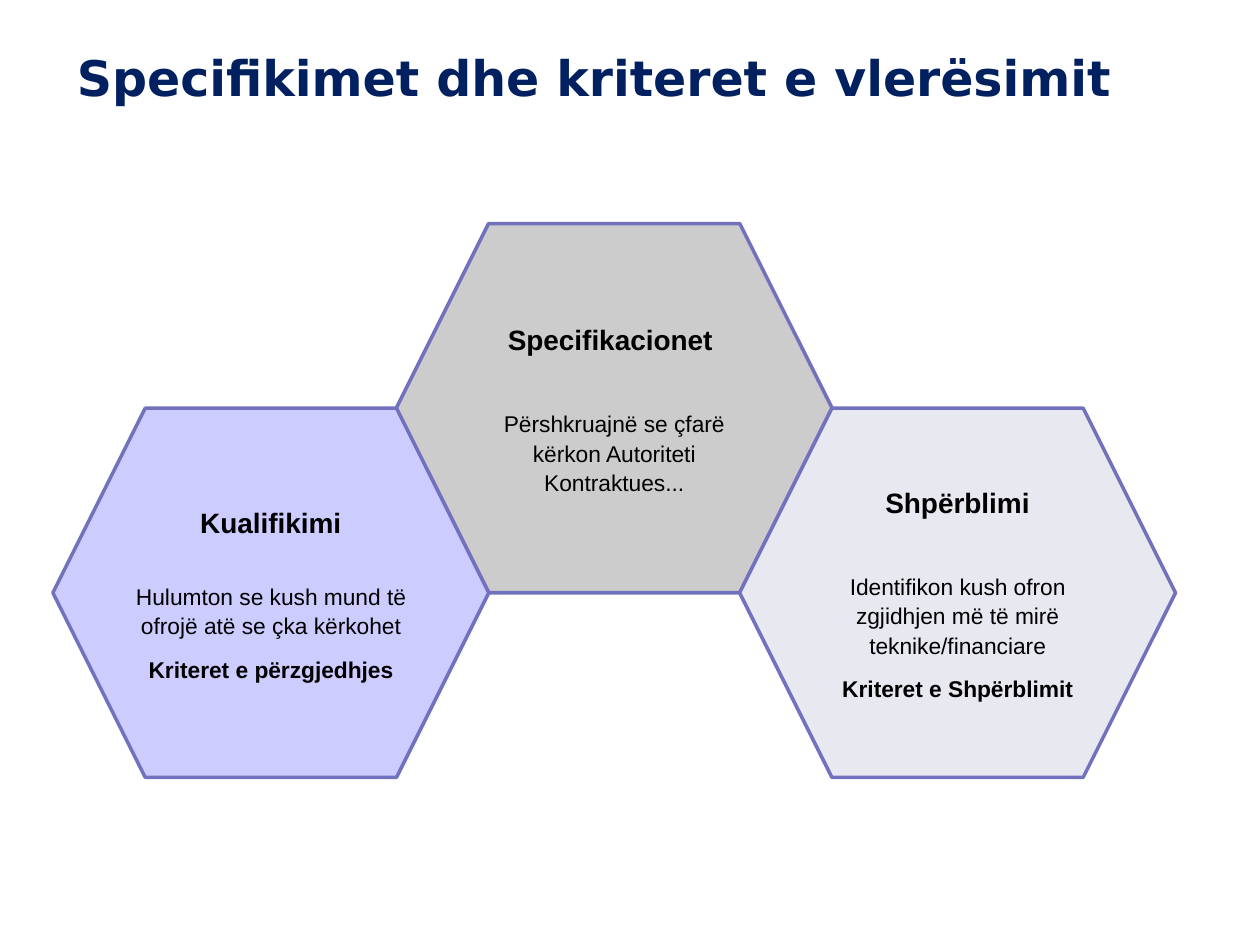
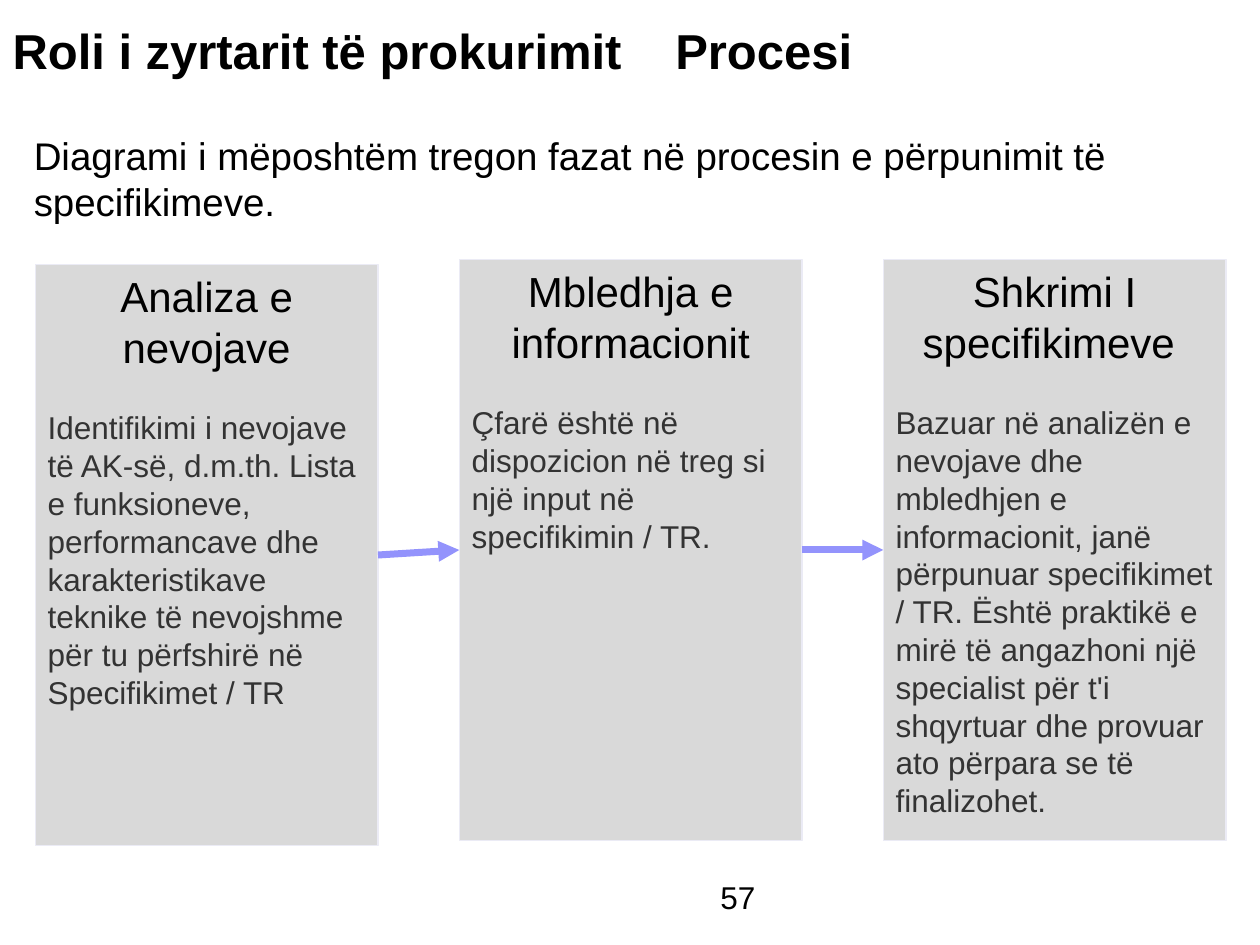
from pptx import Presentation
from pptx.dml.color import RGBColor
from pptx.enum.shapes import MSO_CONNECTOR as Link, MSO_SHAPE as Form
from pptx.enum.text import MSO_ANCHOR as Anchor, MSO_AUTO_SIZE as Fit, PP_ALIGN as Align
from pptx.oxml.ns import qn
from pptx.util import Inches, Pt
from lxml.etree import SubElement as Sub

# Grid: 100 columns by 75 rows on a 10 x 7.5 inch page
COLS, ROWS = 100, 75
WIDE, HIGH = Inches(10), Inches(7.5)

BLACK, NAVY, DARK = "000000", "002060", "333333"
EDGE, PANEL, RIM, ARROW = "7171BD", "D9D9D9", "EBEBF5", "9393FC"


def tint(code):
    return RGBColor.from_string(code)


class Deck:
    """Holds the style and the current slide."""

    def __init__(self):
        self.prs = Presentation()
        self.prs.slide_width, self.prs.slide_height = WIDE, HIGH
        self.slide = None

    def area(self, x, y, w, h):
        return [int(v) for v in (x * WIDE / COLS, y * HIGH / ROWS,
                                 w * WIDE / COLS, h * HIGH / ROWS)]

    def style(self, para, size, color=BLACK, bold=False, font="Arial",
              align=Align.LEFT, after=0, line=1.0):
        para.alignment, para.line_spacing = align, line
        para.space_before, para.space_after = Pt(0), Pt(after)
        for run in para.runs:
            run.font.name, run.font.size = font, Pt(size)
            run.font.bold, run.font.color.rgb = bold, tint(color)

    def fill(self, frame, rows):
        """Each row is a text and its style."""
        frame.text = "\n".join(text for text, _ in rows)
        for para, (_, look) in zip(frame.paragraphs, rows):
            self.style(para, **look)

    def page(self, text, place, tab=None, **look):
        """Starts a slide with its title."""
        self.slide = self.prs.slides.add_slide(self.prs.slide_layouts[5])
        title = self.slide.shapes.title
        title.left, title.top, title.width, title.height = self.area(*place)
        frame = title.text_frame
        frame.text = text
        frame.word_wrap, frame.auto_size = True, Fit.NONE
        frame.vertical_anchor = Anchor.TOP
        para = frame.paragraphs[0]
        self.style(para, 28, bold=True, **look)
        if tab:
            stops = Sub(para._p.get_or_add_pPr(), qn("a:tabLst"))
            Sub(stops, qn("a:tab"), pos=str(int(tab * WIDE / COLS)), algn="l")

    def note(self, text, place, size, wrap=True):
        frame = self.slide.shapes.add_textbox(*self.area(*place)).text_frame
        frame.word_wrap = wrap
        self.fill(frame, [(text, dict(size=size))])

    def block(self, form, place, fill, edge, width, rows, anchor, inset=None):
        shape = self.slide.shapes.add_shape(form, *self.area(*place))
        shape.shadow.inherit = False
        shape.fill.solid()
        shape.fill.fore_color.rgb = tint(fill)
        shape.line.color.rgb, shape.line.width = tint(edge), Pt(width)
        frame = shape.text_frame
        frame.word_wrap, frame.vertical_anchor = True, anchor
        if inset is not None:
            frame.margin_left = frame.margin_right = inset
            frame.margin_top = frame.margin_bottom = inset
        self.fill(frame, rows)
        return shape

    def arrow(self, start, end):
        """Runs from the right side of one block to the left of the next."""
        link = self.slide.shapes.add_connector(Link.STRAIGHT, 0, 0, 0, 0)
        link.begin_connect(start, 3)
        link.end_connect(end, 1)
        link.line.color.rgb, link.line.width = tint(ARROW), Pt(4)
        Sub(link.line._get_or_add_ln(), qn("a:tailEnd"), type="triangle")
        Sub(link._element.spPr, qn("a:effectLst"))


def criteria(deck):
    deck.page("Specifikimet dhe kriteret e vlerësimit", (5.1, 3.3, 84.2, 5.7),
              color=NAVY, font="DejaVu Sans")
    # Column, fill, inset, gap under the heading, heading, body, closing line
    cells = [
        (1, "CCCCCC", None, 29.5, "Specifikacionet ",
         "Përshkruajnë se çfarë kërkon Autoriteti Kontraktues...", None),
        (2, "E8E8F1", 0, 29.5, "Shpërblimi",
         "Identifikon kush ofron zgjidhjen më të mirë teknike/financiare",
         "Kriteret e Shpërblimit"),
        (0, "CCCCFF", 0, 24, "Kualifikimi",
         "Hulumton se kush mund të ofrojë atë se çka kërkohet",
         "Kriteret e përzgjedhjes"),
    ]
    wide, high = 34.6, 29.3
    base = dict(align=Align.CENTER, line=1.07)
    for col, fill, inset, gap, head, body, last in cells:
        rows = [(head, dict(base, size=16, bold=True, after=gap)),
                (body, dict(base, size=13, after=8))]
        if last:
            rows.append((last, dict(base, size=13, bold=True, after=8)))
        # The middle cell sits half a cell higher
        top = 32.4 - (high / 2 if col == 1 else 0)
        deck.block(Form.HEXAGON, (4.2 + 27.25 * col, top, wide, high),
                   fill, EDGE, 2, rows, Anchor.MIDDLE, inset)


def process(deck):
    deck.page("Roli i zyrtarit të prokurimit\tProcesi", (0, 1.1, 100, 5.7), tab=52.6)
    deck.note("57", (56.2, 69.2, 6.4, 4), 18, wrap=False)
    deck.note("Diagrami i mëposhtëm tregon fazat në procesin e përpunimit të "
              "specifikimeve.", (1.7, 10, 98.3, 8.4), 22)
    # Top row, heading, body
    steps = [
        (21, "Analiza e nevojave",
         "Identifikimi i nevojave të AK-së, d.m.th. Lista e funksioneve, "
         "performancave dhe karakteristikave teknike të nevojshme për tu "
         "përfshirë në Specifikimet / TR"),
        (20.6, "Mbledhja e informacionit",
         "Çfarë është në dispozicion në treg si një input në specifikimin / TR."),
        (20.6, "Shkrimi I specifikimeve ",
         "Bazuar në analizën e nevojave dhe mbledhjen e informacionit, janë "
         "përpunuar specifikimet / TR. Është praktikë e mirë të angazhoni një "
         "specialist për t'i shqyrtuar dhe provuar ato përpara se të finalizohet."),
    ]
    boxes = []
    for col, (top, head, body) in enumerate(steps):
        rows = [(head, dict(size=24, align=Align.CENTER, after=21)),
                (body, dict(size=18, color=DARK))]
        boxes.append(deck.block(Form.RECTANGLE, (2.8 + 33.65 * col, top, 27.2, 46.1),
                                PANEL, RIM, 0.75, rows, Anchor.TOP))
    for start, end in zip(boxes, boxes[1:]):
        deck.arrow(start, end)


def main():
    deck = Deck()
    criteria(deck)
    process(deck)
    deck.prs.save("out.pptx")


if __name__ == "__main__":
    main()
